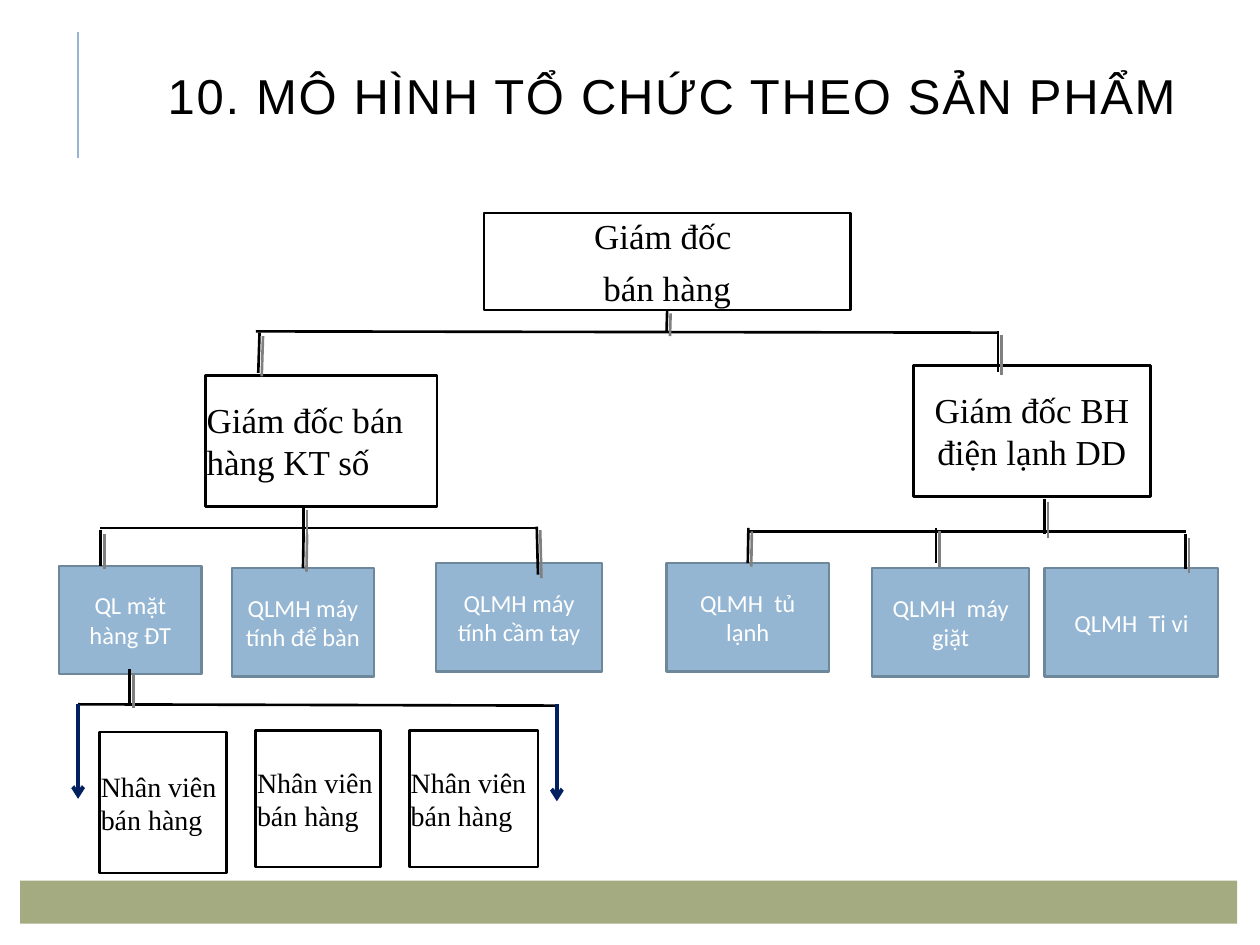
from lxml.etree import SubElement
from pptx import Presentation
from pptx.dml.color import RGBColor
from pptx.enum.shapes import MSO_CONNECTOR, MSO_SHAPE
from pptx.enum.text import MSO_ANCHOR, PP_ALIGN
from pptx.oxml.ns import qn
from pptx.util import Inches, Pt

COLORS = {"black": "000000", "white": "FFFFFF", "blue": "94B6D2", "edge": "6D879B",
          "green": "A5AB81", "navy": "002060", "shadow": "808080"}


def add_box(place, text="", fill=None, edge=None, edge_width=1.5, font="Times New Roman",
            size=20, color="black", align=PP_ALIGN.CENTER, anchor=MSO_ANCHOR.MIDDLE,
            inset=0.01, before=0, after=0):
    box = slide.shapes.add_shape(MSO_SHAPE.RECTANGLE, *[Inches(v) for v in place])
    box.shadow.inherit = False
    if fill:
        box.fill.solid()
        box.fill.fore_color.rgb = RGBColor.from_string(COLORS[fill])
    else:
        box.fill.background()
    if edge:
        box.line.color.rgb = RGBColor.from_string(COLORS[edge])
        box.line.width = Pt(edge_width)
    else:
        box.line.fill.background()
    frame = box.text_frame
    frame.text = text
    frame.word_wrap = True
    frame.vertical_anchor = anchor
    if inset is not None:
        frame.margin_left = frame.margin_right = Inches(inset)
        frame.margin_top = frame.margin_bottom = Inches(inset)
    for paragraph in frame.paragraphs:
        paragraph.alignment = align
        paragraph.space_before, paragraph.space_after = Pt(before), Pt(after)
        for run in paragraph.runs:
            run.font.name, run.font.size = font, Pt(size)
            run.font.color.rgb = RGBColor.from_string(COLORS[color])
    return box


def add_line(start, end, color="black", width=1.5, shadow=False, arrow=False):
    line = slide.shapes.add_connector(
        MSO_CONNECTOR.STRAIGHT, *[Inches(v) for v in (*start, *end)])
    line.line.color.rgb = RGBColor.from_string(COLORS[color])
    line.line.width = Pt(width)
    if arrow:
        SubElement(line.line._get_or_add_ln(), qn("a:tailEnd"), type="arrow")
    effects = SubElement(line._element.spPr, qn("a:effectLst"))
    if shadow:
        outer = SubElement(effects, qn("a:outerShdw"), dist=str(Pt(2.8)),
                           dir="2700000", algn="ctr", rotWithShape="0")
        SubElement(outer, qn("a:srgbClr"), val=COLORS["shadow"])
    return line


prs = Presentation()
prs.slide_width, prs.slide_height = Inches(10), Inches(7.5)
slide = prs.slides.add_slide(prs.slide_layouts[5])

# Side rule and bottom band
add_line((0.62, 1.25), (0.62, 0.25), "blue")
add_box((0.16, 6.99, 9.66, 0.34), fill="green")

# Title
title = slide.shapes.title
title.left, title.top = Inches(0.84), Inches(0.18)
title.width, title.height = Inches(8.99), Inches(1.23)
title.text_frame.text = "10. MÔ HÌNH TỔ CHỨC THEO SẢN PHẨM"
title.text_frame.vertical_anchor = MSO_ANCHOR.MIDDLE
heading = title.text_frame.paragraphs[0]
heading.alignment = PP_ALIGN.CENTER
heading.line_spacing = 0.8
heading_font = heading.runs[0].font
heading_font.name, heading_font.size = "Arial", Pt(28)
heading_font.color.rgb = RGBColor.from_string(COLORS["black"])
heading.runs[0]._r.get_or_add_rPr().set("spc", "100")

# Directors
sales_director = add_box((3.84, 1.69, 2.91, 0.77), "Giám đốc \nbán hàng", edge="black",
                         anchor=MSO_ANCHOR.TOP, before=3, after=3)
add_box((1.63, 2.98, 1.84, 1.04), "Giám đốc bán hàng KT số", edge="black",
        align=PP_ALIGN.LEFT, after=10)
add_box((7.25, 2.9, 1.88, 1.04), "Giám đốc BH điện lạnh DD", edge="black",
        before=3, after=3)

# Product line managers
managers = {}
for text, left, top, width in [
    ("QL mặt hàng ĐT", 0.47, 4.49, 1.13),
    ("QLMH máy tính để bàn", 1.84, 4.51, 1.13),
    ("QLMH máy tính cầm tay", 3.46, 4.47, 1.32),
    ("QLMH  tủ lạnh", 5.29, 4.47, 1.29),
    ("QLMH  máy giặt", 6.92, 4.51, 1.25),
    ("QLMH  Ti vi", 8.29, 4.51, 1.38),
]:
    managers[text] = add_box((left, top, width, 0.86), text, "blue", "edge", 1.25,
                             "Calibri", 14, "white", inset=None)

# Sales staff
for left, top, width, height, after in [
    (0.79, 5.81, 1.01, 1.12, 10), (2.03, 5.8, 0.99, 1.08, 10), (3.25, 5.8, 1.02, 1.08, 0),
]:
    add_box((left, top, width, height), "Nhân viên bán hàng", edge="black", size=16,
            align=PP_ALIGN.LEFT, after=after)

# Horizontal branches
for start, end in [
    ((2.03, 2.63), (7.92, 2.64)), ((0.79, 4.19), (4.27, 4.19)),
    ((5.94, 4.22), (9.41, 4.22)), ((0.62, 5.59), (4.42, 5.6)),
]:
    add_line(start, end)

# Shadowed drops, joined where they meet the middle of a side
for start, end in [
    ((2.06, 2.64), (2.05, 2.96)), ((7.92, 2.63), (7.92, 2.95)),
    ((2.41, 4.02), (2.41, 4.3)), ((8.29, 3.96), (8.29, 4.24)),
    ((0.8, 4.21), (0.8, 4.49)), ((4.26, 4.18), (4.27, 4.56)),
    ((7.43, 4.19), (7.43, 4.47)), ((9.41, 4.24), (9.41, 4.52)),
    ((1.03, 5.31), (1.03, 5.59)),
]:
    add_line(start, end, shadow=True)
add_line((5.29, 2.46), (5.29, 2.64), shadow=True).begin_connect(sales_director, 2)
for text, x, top, bottom in [("QLMH máy tính để bàn", 2.41, 4.21, 4.51),
                             ("QLMH  tủ lạnh", 5.94, 4.19, 4.47)]:
    add_line((x, top), (x, bottom), shadow=True).end_connect(managers[text], 0)

# Arrows beside the staff
for x, bottom in [(0.62, 6.34), (4.42, 6.36)]:
    add_line((x, 5.59), (x, bottom), "navy", 2.25, arrow=True)

prs.save("out.pptx")
